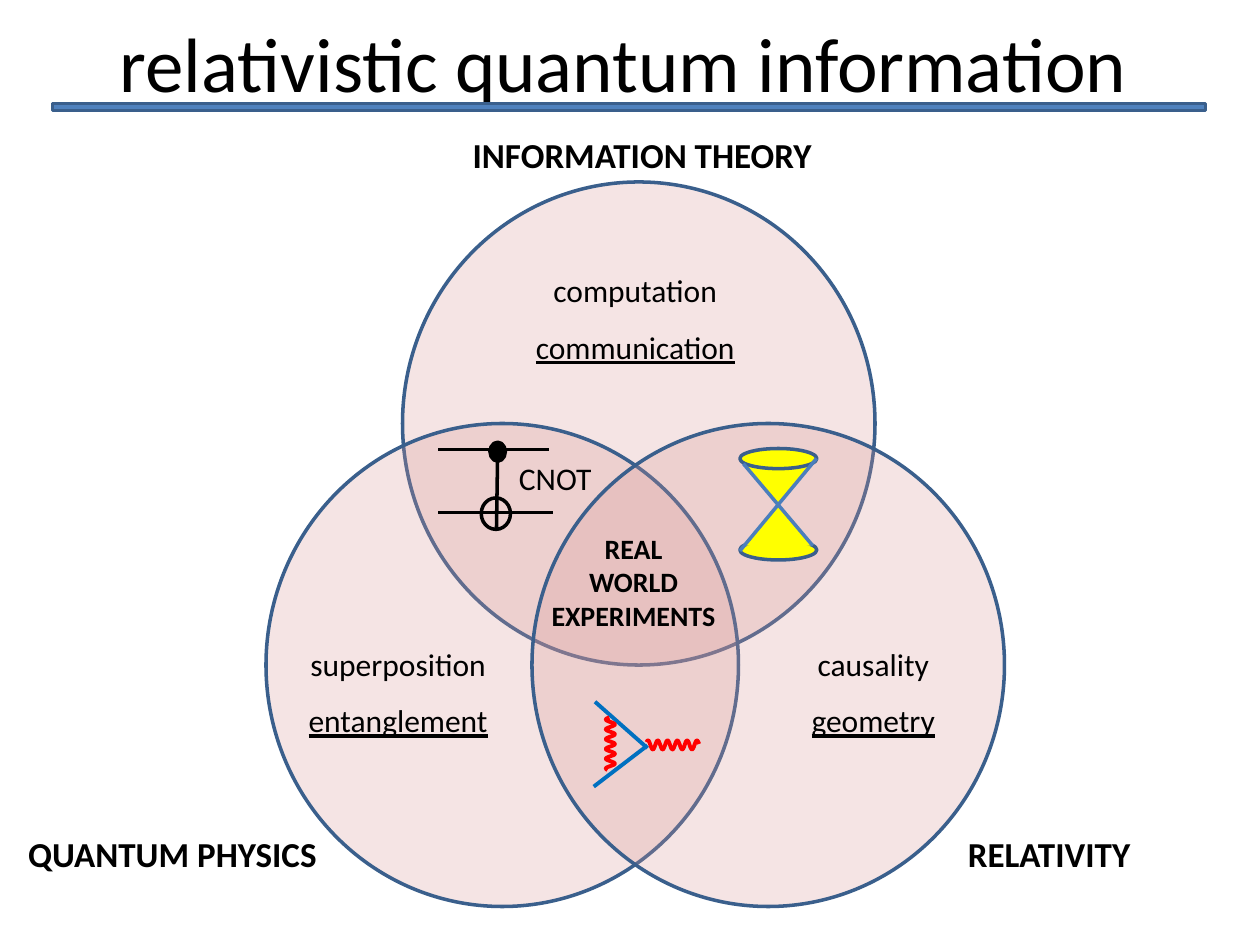
from math import cos, pi
from lxml.etree import SubElement
from pptx import Presentation
from pptx.dml.color import RGBColor
from pptx.enum.shapes import MSO_CONNECTOR as LINE, MSO_SHAPE as SHAPE
from pptx.enum.text import MSO_ANCHOR as ANCHOR, MSO_AUTO_SIZE as SIZE, PP_ALIGN as ALIGN
from pptx.oxml.ns import qn
from pptx.util import Pt

TITLE = "relativistic quantum information"
BLACK, NAVY, BLUE, SKY = "000000", "3A5F8C", "4B7EBC", "0070C0"
ROSE, YELLOW, RED = "D99694", "FFFF00", "FF0000"

CIRCLE_SIZE = (270, 276)
CIRCLES = [(230, 104), (152, 242), (304, 242)]
HEADINGS = [
    ("INFORMATION THEORY", (263, 73, 210, 32)),
    ("QUANTUM PHYSICS", (9, 472, 186, 32)),
    ("RELATIVITY", (546, 472, 108, 32)),
]
TOPICS = [
    (("computation", "communication"), (298, 140.5, 130, 69)),
    (("superposition", "entanglement"), (168.5, 354, 118, 69)),
    (("causality", "geometry"), (456, 354, 86, 69)),
]
CENTER = (("REAL", "WORLD", "EXPERIMENTS"), (304.5, 300, 115, 66))
CNOT_LABEL = ("CNOT", (289.5, 259, 56, 29))
CNOT_WIRES = [
    ((250.5, 257), (314, 257)),
    ((250.5, 293), (316, 293)),
    ((284.4, 258.5), (283.7, 302.4)),
]
CNOT_CONTROL = (280, 252.7, 8.8, 10.8)
CNOT_TARGET = (275, 284.5, 16.7, 18)
CONE_BODY = [(425.5, 311.8), (464.4, 264.2), (424, 264.2), (464.4, 311.8)]
CONE_RIMS = [(422.8, 308.5, 44, 11.5), (422.8, 256.3, 44, 11.5)]
CONE_EDGES = [((464.4, 311.8), (424.8, 265)), ((422.8, 314.8), (466.6, 262))]
PARTICLES = [((340, 401), (370, 427.5)), ((339.3, 449.5), (370, 426))]
WAVE = dict(length=30, period=5.6, peak=3.6, amplitude=2.6)
RULE = (30, 59.3, 659, 3.8)


def color(value):
    return RGBColor.from_string(value)


def set_line(line, value, width=2):
    line.color.rgb = color(value)
    line.width = Pt(width)


def style(s, fill, line, width=2, alpha=None):
    s.shadow.inherit = False
    if fill:
        s.fill.solid()
        s.fill.fore_color.rgb = color(fill)
        if alpha:
            clr = s.fill._xPr.find(qn("a:solidFill"))[0]
            SubElement(clr, qn("a:alpha"), val=str(alpha * 1000))
    else:
        s.fill.background()
    if line:
        set_line(s.line, line, width)
    else:
        s.line.fill.background()


def add_preset(kind, box, fill, line=NAVY, alpha=None):
    s = sp.add_shape(kind, *map(Pt, box))
    style(s, fill, line, alpha=alpha)


def add_line(start, end, value, width=2):
    c = sp.add_connector(LINE.STRAIGHT, *map(Pt, start + end))
    set_line(c.line, value, width)
    SubElement(c._element.spPr, qn("a:effectLst"))


def add_path(points, fill=None, line=None, width=2, close=False):
    pts = [(Pt(x), Pt(y)) for x, y in points]
    fb = sp.build_freeform(*pts[0])
    fb.add_line_segments(pts[1:], close=close)
    style(fb.convert_to_shape(), fill, line, width)


def write(tf, lines, size, align=ALIGN.LEFT, spacing=None, bold=False, underlined=()):
    for i, text in enumerate(lines):
        p = tf.paragraphs[0] if i == 0 else tf.add_paragraph()
        p.alignment = align
        if spacing:
            p.line_spacing = spacing
        r = p.add_run()
        r.text = text
        r.font.color.rgb = color(BLACK)
        fmt = dict(name="Calibri", size=Pt(size), bold=bold, underline=text in underlined)
        for key, value in fmt.items():
            setattr(r.font, key, value)


def add_text(lines, box, size, wrap=False, **fmt):
    tf = sp.add_textbox(*map(Pt, box)).text_frame
    tf.word_wrap = wrap
    tf.auto_size = SIZE.SHAPE_TO_FIT_TEXT
    write(tf, lines, size, **fmt)


def wave(length, period, peak, amplitude):
    steps = 90
    for i in range(steps + 1):
        t = length * i / steps
        yield t, amplitude * cos(2 * pi * (t - peak) / period)


prs = Presentation()
prs.slide_width, prs.slide_height = Pt(720), Pt(540)
slide = prs.slides.add_slide(prs.slide_layouts[5])
sp = slide.shapes

title = sp.title
title.left, title.top, title.width, title.height = map(Pt, (32.4, 0, 648, 70.6))
title.text_frame.vertical_anchor = ANCHOR.MIDDLE
write(title.text_frame, [TITLE], 44, ALIGN.CENTER)

for corner in CIRCLES:
    add_preset(SHAPE.OVAL, corner + CIRCLE_SIZE, ROSE, alpha=25)
for text, box in HEADINGS:
    add_text([text], box, 20, bold=True)
for lines, box in TOPICS:
    add_text(lines, box, 18, align=ALIGN.CENTER, spacing=1.5, underlined=lines[1:])

for start, end in CNOT_WIRES:
    add_line(start, end, BLACK)
add_preset(SHAPE.OVAL, CNOT_CONTROL, BLACK, BLACK)
add_preset(SHAPE.OVAL, CNOT_TARGET, None, BLACK)
add_text([CNOT_LABEL[0]], CNOT_LABEL[1], 18)

lower_rim, upper_rim = CONE_RIMS
add_preset(SHAPE.OVAL, lower_rim, YELLOW)
add_path(CONE_BODY, fill=YELLOW, close=True)
add_preset(SHAPE.OVAL, upper_rim, YELLOW)
for start, end in CONE_EDGES:
    add_line(start, end, BLUE)

for start, end in PARTICLES:
    add_line(start, end, SKY, 2.25)
ripple = list(wave(**WAVE))
add_path([(369.5 + t, 425.7 + d) for t, d in ripple], line=RED, width=2.25)
add_path([(348.8 + d, 440 - t) for t, d in ripple], line=RED, width=2.25)

add_text(*CENTER, 16, wrap=True, align=ALIGN.CENTER, bold=True)
add_preset(SHAPE.RECTANGLE, RULE, "4F81BD")

prs.save("out.pptx")
